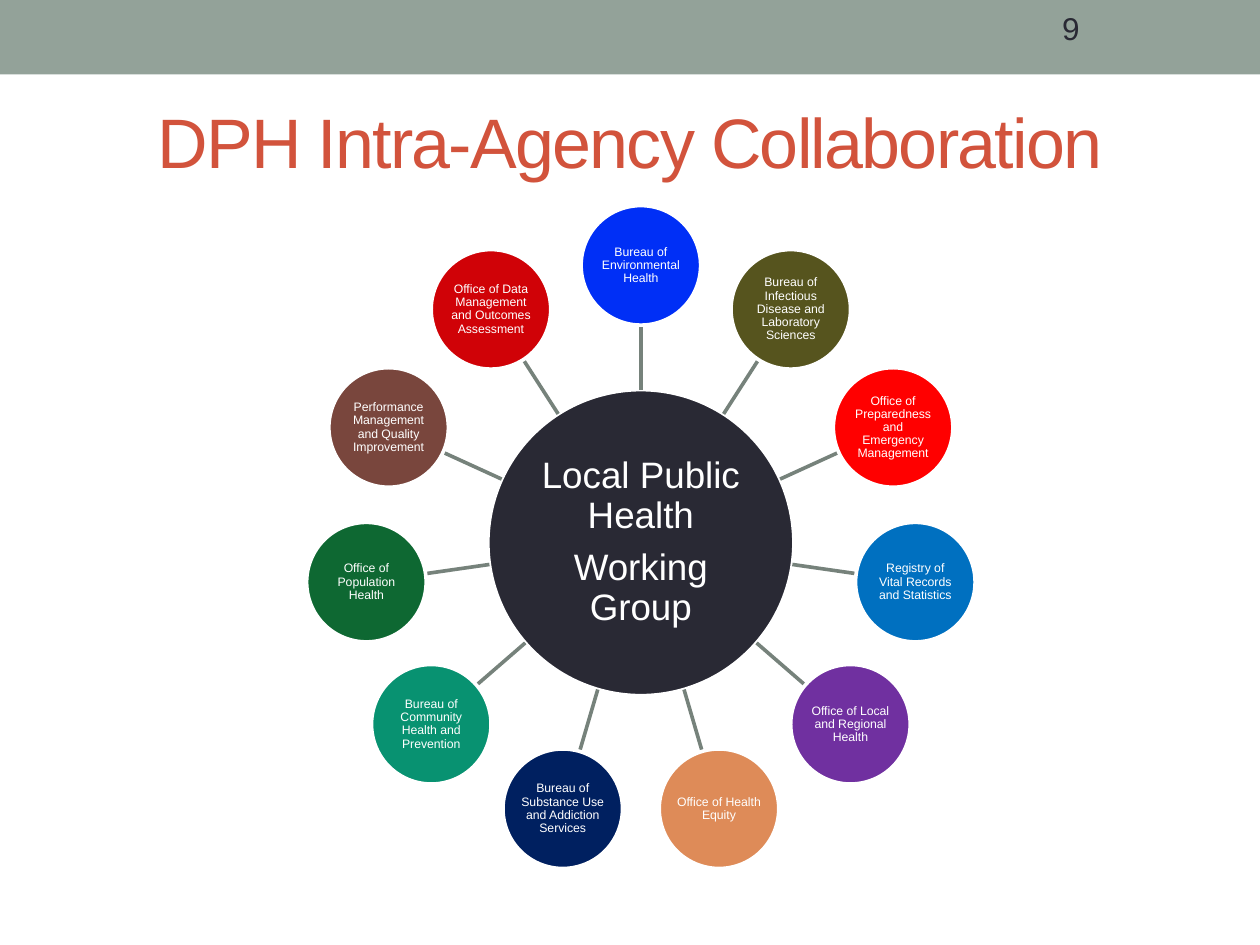
from dataclasses import dataclass
from math import cos, pi, sin

from lxml.etree import SubElement
from pptx import Presentation
from pptx.dml.color import RGBColor as Rgb
from pptx.enum.shapes import MSO_CONNECTOR as Connector, MSO_SHAPE as Shape
from pptx.enum.text import MSO_ANCHOR as Anchor, PP_ALIGN as Align
from pptx.oxml.ns import qn
from pptx.util import Cm, Pt


@dataclass(frozen=True)
class Theme:
    font: str = "Arial"
    band: str = "93A299"
    heading: str = "D2533C"
    dark: str = "292934"
    light: str = "FFFFFF"
    spoke: str = "76827B"
    heading_size: float = 40
    number_size: float = 18
    hub_size: float = 21
    office_size: float = 7
    stroke: float = 2.08
    leading: float = 0.9
    gap: float = 0.35


class Deck:
    def __init__(self, slide, theme):
        self.shapes = slide.shapes
        self.theme = theme

    def set_text(self, frame, lines, size, color, align, anchor, inset=None):
        frame.word_wrap = True
        frame.vertical_anchor = anchor
        if inset is not None:
            frame.margin_left = frame.margin_right = Cm(inset)
            frame.margin_top = frame.margin_bottom = Cm(inset)
        frame.text = "\n".join(lines)
        for paragraph in frame.paragraphs:
            paragraph.alignment = align
            paragraph.font.name = self.theme.font
            paragraph.font.size = Pt(size)
            paragraph.font.color.rgb = Rgb.from_string(color)

    def band(self, width, height):
        band = self.shapes.add_shape(Shape.RECTANGLE, 0, 0, Cm(width), Cm(height))
        band.shadow.inherit = False
        band.fill.solid()
        band.fill.fore_color.rgb = Rgb.from_string(self.theme.band)
        band.line.fill.background()

    def label(self, text, left, top, width, height, size, color,
              align=Align.LEFT, anchor=Anchor.TOP, tracking=0):
        label = self.shapes.add_textbox(Cm(left), Cm(top), Cm(width), Cm(height))
        self.set_text(label.text_frame, [text], size, color, align, anchor)
        if tracking:
            run = label.text_frame.paragraphs[0].runs[0]
            run.font._element.set("spc", str(tracking * 100))

    def circle(self, lines, x, y, diameter, fill, size, inset=0):
        circle = self.shapes.add_shape(
            Shape.OVAL, Cm(x - diameter / 2), Cm(y - diameter / 2), Cm(diameter), Cm(diameter))
        circle.shadow.inherit = False
        circle.fill.solid()
        circle.fill.fore_color.rgb = Rgb.from_string(fill)
        circle.line.color.rgb = Rgb.from_string(self.theme.light)
        circle.line.width = Pt(self.theme.stroke)
        self.set_text(circle.text_frame, lines, size, self.theme.light,
                      Align.CENTER, Anchor.MIDDLE, inset)
        for paragraph in circle.text_frame.paragraphs:
            paragraph.line_spacing = self.theme.leading
            paragraph.space_after = Pt(size * self.theme.gap)

    def spoke(self, start, end):
        spoke = self.shapes.add_connector(Connector.STRAIGHT, *map(Cm, start + end))
        spoke.line.color.rgb = Rgb.from_string(self.theme.spoke)
        spoke.line.width = Pt(self.theme.stroke)
        SubElement(spoke._element.spPr, qn("a:effectLst"))


OFFICES = [
    ("Bureau of Environmental Health", "002FF6"),
    ("Bureau of Infectious Disease and Laboratory Sciences", "56541E"),
    ("Office of Preparedness and Emergency Management", "FF0000"),
    ("Registry of Vital Records and Statistics", "0070C0"),
    ("Office of Local and Regional Health", "7030A0"),
    ("Office of Health Equity", "DE8B58"),
    ("Bureau of Substance Use and Addiction Services", "002060"),
    ("Bureau of Community Health and Prevention", "089271"),
    ("Office of Population Health", "0E6832"),
    ("Performance Management and Quality Improvement", "79463D"),
    ("Office of Data Management and Outcomes Assessment", "D00207"),
]
CENTER_X, CENTER_Y = 12.92, 10.94
HUB, OFFICE, ORBIT = 6.17, 2.41, 5.59


def around(radius, angle):
    return CENTER_X + radius * sin(angle), CENTER_Y - radius * cos(angle)


def main():
    presentation = Presentation()
    presentation.slide_width, presentation.slide_height = Cm(25.4), Cm(19.05)
    theme = Theme()
    deck = Deck(presentation.slides.add_slide(presentation.slide_layouts[6]), theme)

    deck.band(25.4, 1.5)
    deck.label("DPH Intra-Agency Collaboration", 1.27, 1.47, 22.86, 2.74,
               theme.heading_size, theme.heading, Align.CENTER, Anchor.MIDDLE, tracking=-1)
    deck.circle(["Local Public Health", "Working Group"], CENTER_X, CENTER_Y, HUB,
                theme.dark, theme.hub_size, inset=0.03)
    for position, (office, color) in enumerate(OFFICES):
        angle = 2 * pi * position / len(OFFICES)
        deck.spoke(around(HUB / 2, angle), around(ORBIT - OFFICE / 2, angle))
        deck.circle([office], *around(ORBIT, angle), OFFICE, color, theme.office_size)
    deck.label("9", 21.16, 0.05, 2.97, 0.91, theme.number_size, theme.dark)

    presentation.save("out.pptx")


if __name__ == "__main__":
    main()
